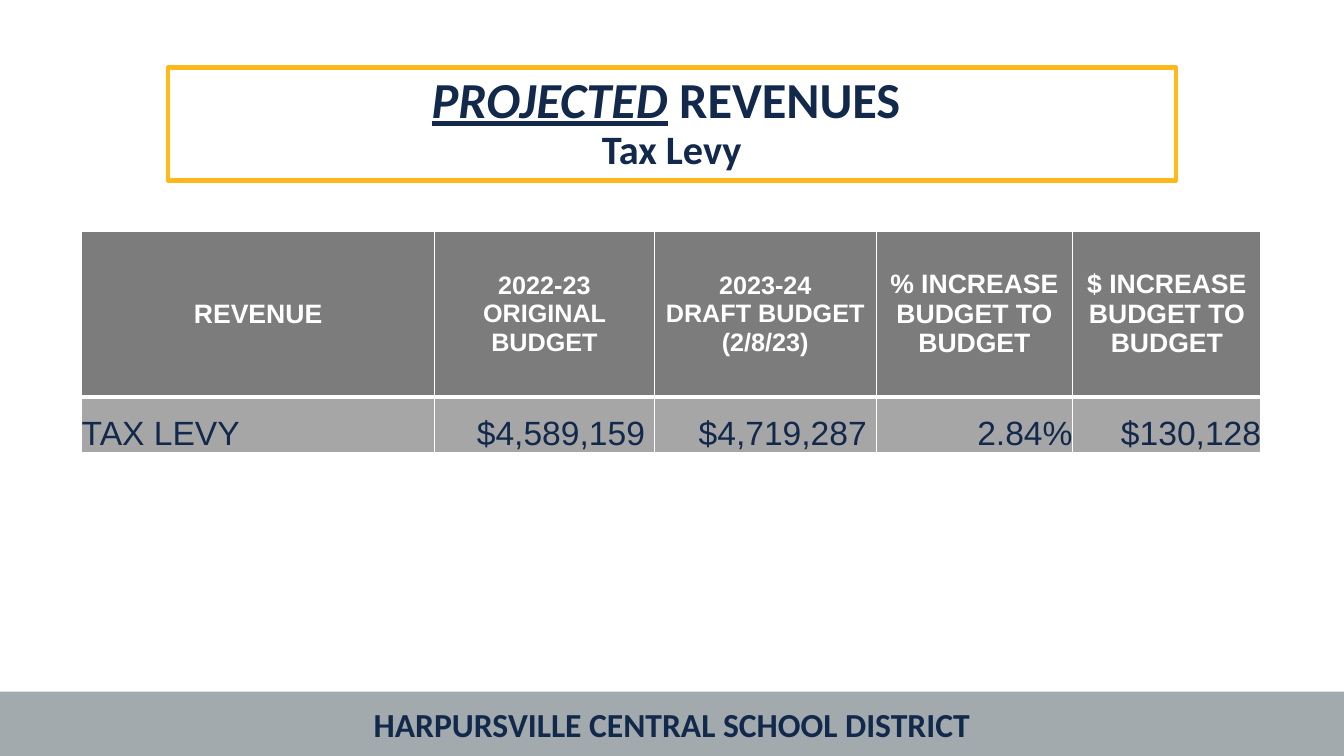
from pptx import Presentation
from pptx.dml.color import RGBColor
from pptx.enum.shapes import MSO_SHAPE as Shape
from pptx.enum.text import MSO_ANCHOR as Anchor, MSO_AUTO_SIZE as AutoSize, PP_ALIGN as Align
from pptx.oxml import parse_xml
from pptx.oxml.ns import nsdecls
from pptx.util import Cm, Pt

NAVY, GOLD, WHITE = "13294B", "FFB81C", "FFFFFF"


def color(value):
    return RGBColor.from_string(value)


def style(para, font, size, value, bold, align):
    para.alignment = align
    for span in para.runs:
        span.font.name = font
        span.font.size = Pt(size)
        span.font.bold = bold
        span.font.color.rgb = color(value)


deck = Presentation()
deck.slide_width, deck.slide_height = Cm(33.87), Cm(19.05)
page = deck.slides.add_slide(deck.slide_layouts[5])

footer = page.shapes.add_shape(Shape.RECTANGLE, 0, Cm(17.43), Cm(33.87), Cm(1.62))
footer.shadow.inherit = False
footer.fill.solid()
footer.fill.fore_color.rgb = color("A2AAAD")
footer.line.fill.background()
footer.text_frame.text = "HARPURSVILLE CENTRAL SCHOOL DISTRICT"
footer.text_frame.vertical_anchor = Anchor.MIDDLE
style(footer.text_frame.paragraphs[0], "Calibri", 24, NAVY, True, Align.CENTER)

title = page.shapes.title
title.left, title.top, title.width, title.height = Cm(4.23), Cm(1.7), Cm(25.4), Cm(2.85)
title.line.color.rgb = color(GOLD)
title.line.width = Pt(3)
title.text_frame.auto_size = AutoSize.NONE
title.text_frame.vertical_anchor = Anchor.MIDDLE
title.text_frame.text = "PROJECTED\nTax Levy"
heading, subheading = title.text_frame.paragraphs
projected = heading.runs[0]
projected.font.italic = True
projected.font.underline = True
heading.add_run().text = " REVENUES "
for para, size in ((heading, 36), (subheading, 28.8)):
    para.line_spacing = 0.9
    style(para, "Calibri", size, NAVY, True, Align.CENTER)

rows = [
    ["REVENUE", "2022-23\nORIGINAL BUDGET", "2023-24\nDRAFT BUDGET (2/8/23)",
     "% INCREASE BUDGET TO BUDGET", "$ INCREASE BUDGET TO BUDGET"],
    ["TAX LEVY", "$4,589,159 ", "$4,719,287 ", "2.84%", "$130,128"],
]
widths = [8.89, 5.54, 5.59, 4.95, 4.75]
heights = [4.19, 1.4]
frame = page.shapes.add_table(2, 5, Cm(2.06), Cm(5.82), Cm(sum(widths)), Cm(sum(heights)))
table = frame.table
for column, width in zip(table.columns, widths):
    column.width = Cm(width)
for row, height in zip(table.rows, heights):
    row.height = Cm(height)

for r, texts in enumerate(rows):
    header = r == 0
    borders = {"L": 1, "R": 1, "T": 1 if header else 3, "B": 3 if header else 1}
    for c, text in enumerate(texts):
        cell = table.cell(r, c)
        years = header and "\n" in text
        cell.text_frame.text = text
        cell.vertical_anchor = Anchor.MIDDLE if header else Anchor.BOTTOM
        if not years:
            cell.margin_left = cell.margin_right = cell.margin_top = cell.margin_bottom = 0
        for side, weight in borders.items():
            cell._tc.get_or_add_tcPr().append(parse_xml(
                f'<a:ln{side} {nsdecls("a")} w="{Pt(weight)}"><a:solidFill>'
                f'<a:srgbClr val="{WHITE}"/></a:solidFill></a:ln{side}>'))
        cell.fill.solid()
        cell.fill.fore_color.rgb = color("7C7C7C" if header else "A6A6A6")
        for para in cell.text_frame.paragraphs:
            if header:
                style(para, "Arial", 18 if years else 19, WHITE, True, Align.CENTER)
            else:
                style(para, "Arial", 24, NAVY, False, Align.RIGHT if c else Align.LEFT)

deck.save("out.pptx")
